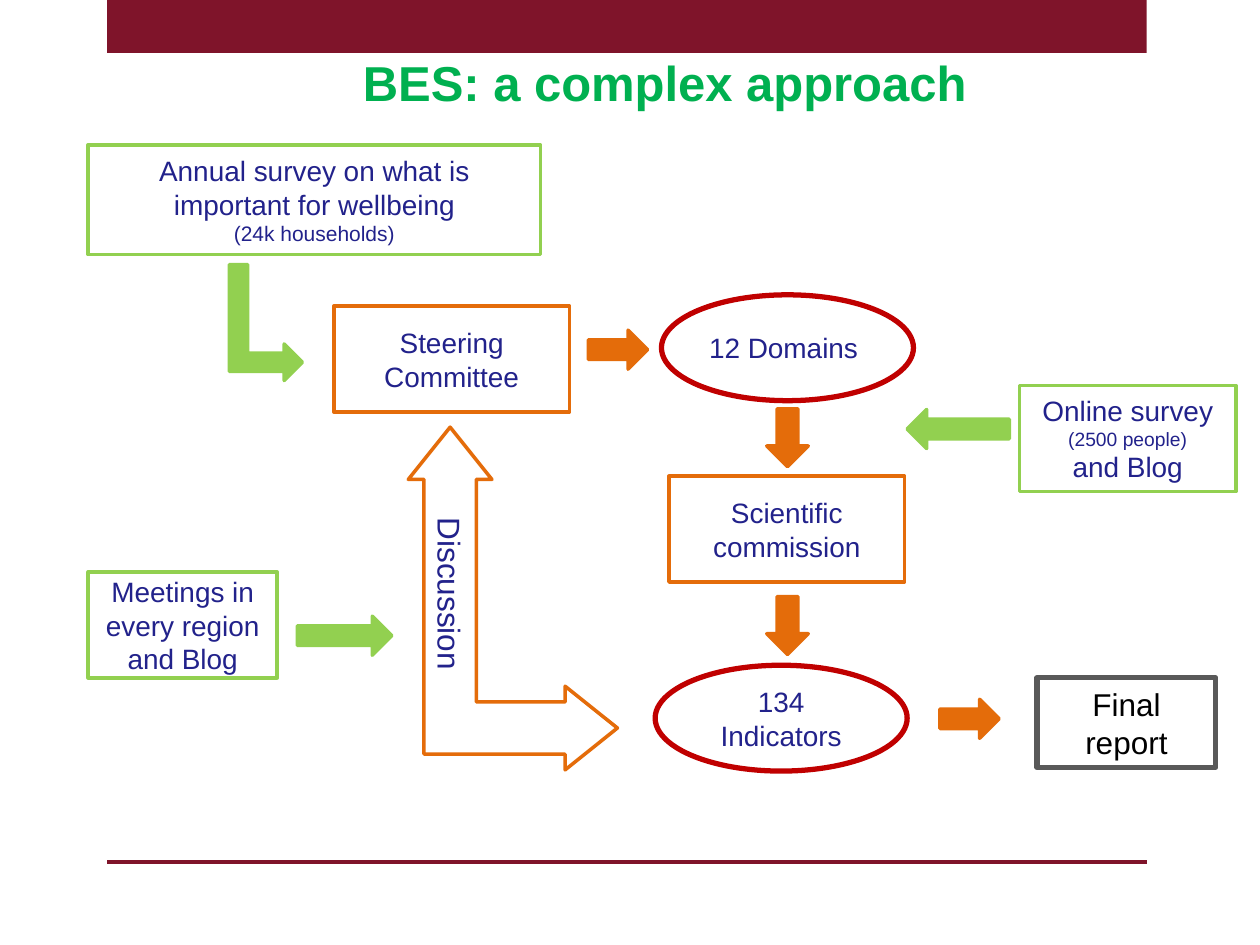
from dataclasses import dataclass

from lxml import etree
from pptx import Presentation
from pptx.dml.color import RGBColor
from pptx.enum import shapes, text
from pptx.oxml import ns
from pptx.util import Inches, Pt

KIND = shapes.MSO_SHAPE


@dataclass(frozen=True)
class Theme:
    font: str = "Arial"
    maroon: str = "7F142A"
    title: str = "00B050"
    ink: str = "22228B"
    black: str = "000000"
    survey: str = "92D050"
    process: str = "E46C0A"
    result: str = "C00000"
    report: str = "595959"
    title_size: int = 28
    large: int = 18
    body: int = 16
    note: int = 12
    small_note: int = 11
    thin: int = 2
    thick: int = 3


@dataclass(frozen=True)
class Box:
    left: float
    top: float
    width: float
    height: float

    def inner(self, left, top, width, height):
        return Box(self.left + left, self.top + top, width, height)

    def lengths(self):
        return [Inches(value) for value in (self.left, self.top, self.width, self.height)]


THEME = Theme()
FRAME_FORMAT = {
    "word_wrap": True,
    "vertical_anchor": text.MSO_ANCHOR.MIDDLE,
    "margin_left": Inches(0.08),
    "margin_right": Inches(0.08),
    "margin_top": Inches(0.08),
    "margin_bottom": Inches(0.08),
}


def apply_format(target, values):
    for name, value in values.items():
        setattr(target, name, value)


def write(frame, paragraphs, color, bold=False):
    apply_format(frame, FRAME_FORMAT)
    for index, runs in enumerate(paragraphs):
        paragraph = frame.paragraphs[0] if index == 0 else frame.add_paragraph()
        paragraph.alignment = text.PP_ALIGN.CENTER
        for words, size in runs:
            run = paragraph.add_run()
            run.text = words
            apply_format(run.font, {"name": THEME.font, "size": Pt(size), "bold": bold})
            run.font.color.rgb = RGBColor.from_string(color)


def add_outline(slide, kind, box, color, paragraphs, weight=THEME.thin, ink=THEME.ink):
    shape = slide.shapes.add_shape(kind, *box.lengths())
    shape.shadow.inherit = False
    shape.fill.background()
    shape.line.color.rgb = RGBColor.from_string(color)
    shape.line.width = Pt(weight)
    write(shape.text_frame, paragraphs, ink)
    return shape


def add_arrow(slide, kind, box, color, rotation=0):
    shape = slide.shapes.add_shape(kind, *box.lengths())
    shape.shadow.inherit = False
    shape.fill.solid()
    shape.fill.fore_color.rgb = RGBColor.from_string(color)
    shape.line.color.rgb = RGBColor.from_string(color)
    shape.line.width = Pt(THEME.thin)
    shape.rotation = rotation


def draw_border(slide, box):
    band = slide.shapes.add_shape(KIND.RECTANGLE, *box.inner(0, 0, box.width, 0.42).lengths())
    band.shadow.inherit = False
    band.fill.solid()
    band.fill.fore_color.rgb = RGBColor.from_string(THEME.maroon)
    band.line.fill.background()
    left, top, width, height = box.lengths()
    rule = slide.shapes.add_connector(
        shapes.MSO_CONNECTOR.STRAIGHT, left, top + height, left + width, top + height)
    rule.line.color.rgb = RGBColor.from_string(THEME.maroon)
    rule.line.width = Pt(THEME.thin)
    etree.SubElement(rule._element.spPr, ns.qn("a:effectLst"))


def draw_title(slide, box):
    title = slide.shapes.title
    apply_format(title, dict(zip(("left", "top", "width", "height"), box.lengths())))
    write(title.text_frame, [[("BES: a complex approach", THEME.title_size)]], THEME.title, True)


def draw_committee(slide, box):
    discussion = add_outline(slide, KIND.LEFT_UP_ARROW, box.inner(0.06, 1.49, 2.72, 1.66),
                             THEME.process, [[("Discussion", THEME.large)]])
    discussion.rotation = 90
    for index, value in enumerate((0.25, 0.2, 0.25)):
        discussion.adjustments[index] = value
    add_outline(slide, KIND.FLOWCHART_PROCESS, box.inner(0, 0, 1.87, 0.84),
                THEME.process, [[("Steering Committee", THEME.body)]])
    add_arrow(slide, KIND.RIGHT_ARROW, box.inner(2.02, 0.19, 0.47, 0.31), THEME.process)


def draw_annual_survey(slide, box):
    add_outline(slide, KIND.FLOWCHART_PROCESS, box.inner(0, 0, 3.59, 0.87), THEME.survey, [
        [("Annual survey on what is important for wellbeing", THEME.body)],
        [("(24k households)", THEME.note)]])
    add_arrow(slide, KIND.BENT_UP_ARROW, box.inner(0.95, 1.12, 0.92, 0.58), THEME.survey, 90)


def draw_meetings(slide, box):
    add_outline(slide, KIND.FLOWCHART_PROCESS, box.inner(0, 0, 1.5, 0.84), THEME.survey, [
        [("Meetings in every region", THEME.body)], [("and Blog", THEME.body)]])
    add_arrow(slide, KIND.RIGHT_ARROW, box.inner(1.66, 0.35, 0.75, 0.31), THEME.survey)


def draw_online_survey(slide, box):
    add_arrow(slide, KIND.LEFT_ARROW, box.inner(0, 0.19, 0.81, 0.31), THEME.survey)
    add_outline(slide, KIND.FLOWCHART_PROCESS, box.inner(0.89, 0, 1.72, 0.84), THEME.survey, [
        [("Online survey ", THEME.body), ("(2500 people)", THEME.small_note)],
        [("and Blog", THEME.body)]])


def draw_selection(slide, box):
    add_outline(slide, KIND.OVAL, box.inner(0.05, 0, 2, 0.84), THEME.result,
                [[("12 Domains ", THEME.body)]], THEME.thick)
    add_outline(slide, KIND.FLOWCHART_PROCESS, box.inner(0.11, 1.44, 1.87, 0.84),
                THEME.process, [[("Scientific commission", THEME.body)]])
    add_outline(slide, KIND.OVAL, box.inner(0, 2.94, 2, 0.84), THEME.result,
                [[("134", THEME.body)], [("Indicators", THEME.body)]], THEME.thick)
    for top in (0.97, 2.46):
        add_arrow(slide, KIND.RIGHT_ARROW, box.inner(0.82, top, 0.46, 0.33), THEME.process, 90)


def draw_report(slide, box):
    add_arrow(slide, KIND.RIGHT_ARROW, box.inner(0, 0.17, 0.47, 0.31), THEME.process)
    add_outline(slide, KIND.RECTANGLE, box.inner(0.77, 0, 1.42, 0.71), THEME.report,
                [[("Final report", THEME.large)]], THEME.thick, THEME.black)


def main():
    presentation = Presentation()
    presentation.slide_width = Inches(10)
    presentation.slide_height = Inches(7.5)
    slide = presentation.slides.add_slide(presentation.slide_layouts[5])
    regions = (
        (draw_border, Box(0.85, 0, 8.25, 6.84)),
        (draw_title, Box(0.75, 0.38, 9.05, 0.54)),
        (draw_committee, Box(2.65, 2.43, 2.78, 3.15)),
        (draw_annual_survey, Box(0.7, 1.15, 3.59, 1.7)),
        (draw_meetings, Box(0.7, 4.54, 2.41, 0.84)),
        (draw_online_survey, Box(7.2, 3.06, 2.61, 0.84)),
        (draw_selection, Box(5.2, 2.34, 2.05, 3.78)),
        (draw_report, Box(7.46, 5.38, 2.19, 0.71)),
    )
    for draw, box in regions:
        draw(slide, box)
    presentation.save("out.pptx")


if __name__ == "__main__":
    main()
